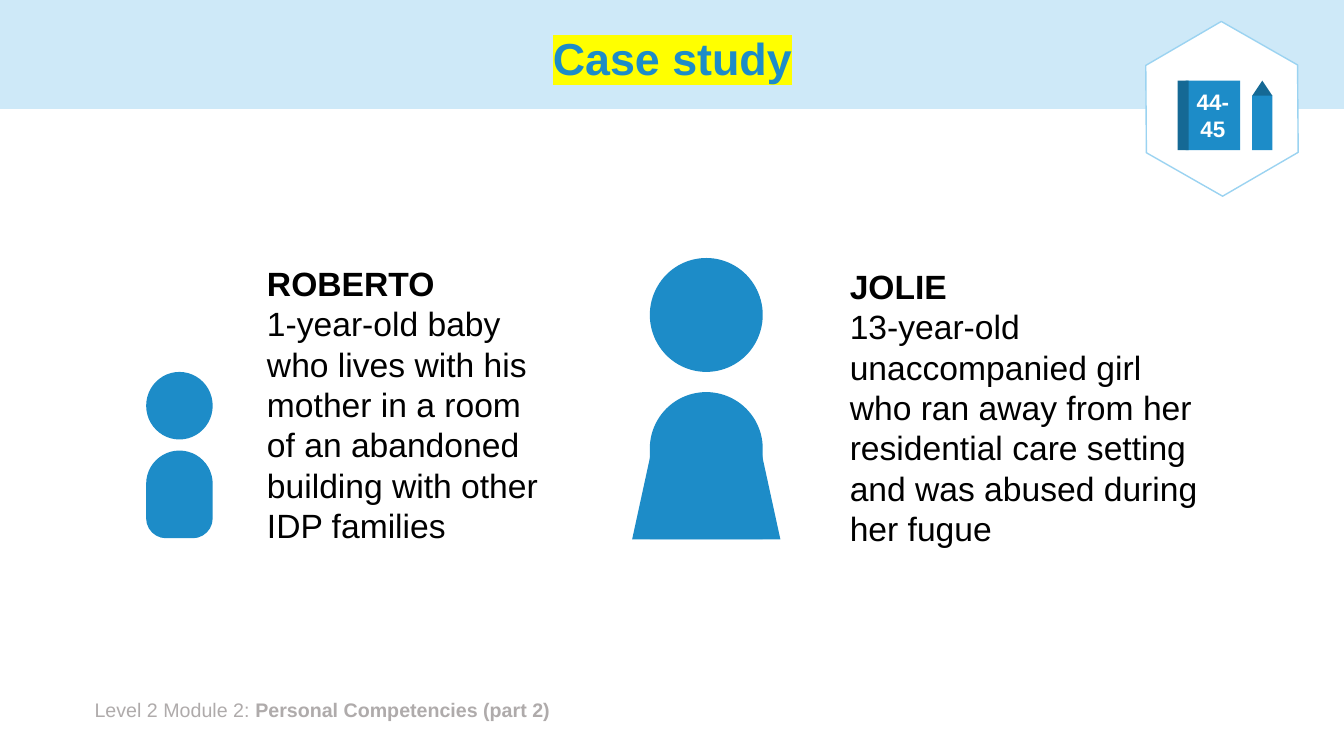
import pptx
import pptx.dml.color
import pptx.enum.shapes
import pptx.enum.text
import pptx.oxml
import pptx.oxml.ns
import pptx.util

Inches = pptx.util.Inches
Pt = pptx.util.Pt
SHAPE = pptx.enum.shapes.MSO_SHAPE
ALIGN = pptx.enum.text.PP_ALIGN
ANCHOR = pptx.enum.text.MSO_ANCHOR

COLOURS = {
    "band": "CEE9F8",
    "blue": "1D8CC8",
    "dark_blue": "156995",
    "outline": "9BD3F1",
    "footer": "AFABAB",
    "highlight": "FFFF00",
    "black": "000000",
    "white": "FFFFFF",
}


def rgb(colour):
    return pptx.dml.color.RGBColor.from_string(COLOURS[colour])


def highlight_run(run, colour):
    fill = run.font._element.find(pptx.oxml.ns.qn("a:solidFill"))
    fill.addnext(pptx.oxml.parse_xml(
        f'<a:highlight {pptx.oxml.ns.nsdecls("a")}>'
        f'<a:srgbClr val="{COLOURS[colour]}"/></a:highlight>'))


def write_text(frame, paragraphs, size, colour, align=ALIGN.LEFT,
               anchor=ANCHOR.TOP, wrap=True, spacing=None, highlight=None):
    """Fill a text frame; each paragraph is a list of (text, bold) runs."""
    frame.word_wrap = wrap
    frame.vertical_anchor = anchor
    for index, runs in enumerate(paragraphs):
        paragraph = frame.add_paragraph() if index else frame.paragraphs[0]
        paragraph.alignment = align
        if spacing:
            paragraph.line_spacing = spacing
        for text, bold in runs:
            run = paragraph.add_run()
            run.text = text
            run.font.name = "Arial"
            run.font.size = Pt(size)
            run.font.bold = bold
            run.font.color.rgb = rgb(colour)
            if highlight:
                highlight_run(run, highlight)


def add_figure(shapes, kind, left, top, width, height, fill, line=None, adjust=()):
    figure = shapes.add_shape(kind, Inches(left), Inches(top),
                              Inches(width), Inches(height))
    figure.shadow.inherit = False
    figure.fill.solid()
    figure.fill.fore_color.rgb = rgb(fill)
    if line:
        figure.line.color.rgb = rgb(line)
        figure.line.width = Pt(1)
    else:
        figure.line.fill.background()
    for index, value in enumerate(adjust):
        figure.adjustments[index] = value
    return figure


def add_text(slide, left, top, width, height, paragraphs, **text_format):
    box = slide.shapes.add_textbox(Inches(left), Inches(top),
                                   Inches(width), Inches(height))
    write_text(box.text_frame, paragraphs, **text_format)


def add_header(slide, width, height):
    band = add_figure(slide.shapes, SHAPE.RECTANGLE, 0, 0, width, height, "band")
    title = slide.shapes.title
    band._element.getparent().insert(2, band._element)  # behind the title
    title.left, title.top = Inches(0.92), Inches(0.13)
    title.width, title.height = Inches(11.5), Inches(height - 0.13)
    title.text_frame.auto_size = pptx.enum.text.MSO_AUTO_SIZE.NONE
    write_text(title.text_frame, [[("Case study", True)]], size=32, colour="blue",
               align=ALIGN.CENTER, anchor=ANCHOR.MIDDLE, spacing=0.9,
               highlight="highlight")


def add_footer(slide, left, top, width, height):
    add_text(slide, left, top, width, height,
             [[("Level 2 Module 2: ", False),
               ("Personal Competencies (part 2)", True)]],
             size=14, colour="footer")


def add_baby(slide, left, top, width, height):
    shapes = slide.shapes.add_group_shape().shapes
    body_height = 0.87
    add_figure(shapes, SHAPE.ROUND_2_SAME_RECTANGLE, left, top + height - body_height,
               width, body_height, "blue", adjust=(0.5, 0.3))
    add_figure(shapes, SHAPE.OVAL, left, top, width, width + 0.01, "blue")


def add_girl(slide, left, top, width, height):
    shapes = slide.shapes.add_group_shape().shapes
    head, body_height, skirt_height = 1.12, 1.46, 0.99
    inset = (width - head) / 2
    bottom = top + height
    add_figure(shapes, SHAPE.ROUND_2_SAME_RECTANGLE, left + inset,
               bottom - body_height, head, body_height, "blue", adjust=(0.5, 0))
    add_figure(shapes, SHAPE.OVAL, left + inset, top, head, head + 0.01, "blue")
    add_figure(shapes, SHAPE.TRAPEZOID, left, bottom - skirt_height,
               width, skirt_height, "blue", adjust=(0.218,))


def add_story(slide, left, top, width, height, name, story):
    add_text(slide, left, top, width, height,
             [[(name, True)], [(story, False)]], size=24, colour="black")


def add_page_badge(slide, left, top, width, height, pages):
    """Hexagon holding a book with page numbers and a pencil."""
    shapes = slide.shapes.add_group_shape().shapes
    hexagon = add_figure(shapes, SHAPE.HEXAGON, left, top, width, height, "white",
                         line="outline", adjust=(0.29, 1.1547))
    hexagon.rotation = 29.7
    book_top, book_height, tip_height = top + 0.47, 0.69, 0.15
    pencil_left, pencil_width = left + 1.17, 0.2
    cover = add_figure(shapes, SHAPE.RECTANGLE, left + 0.51, book_top,
                       0.54, book_height, "blue")
    write_text(cover.text_frame, [[(page, True)] for page in pages], size=16,
               colour="white", align=ALIGN.CENTER, anchor=ANCHOR.MIDDLE, wrap=False)
    add_figure(shapes, SHAPE.RECTANGLE, left + 0.43, book_top,
               0.11, book_height, "dark_blue")
    add_figure(shapes, SHAPE.ISOSCELES_TRIANGLE, pencil_left, book_top,
               pencil_width, tip_height, "dark_blue")
    add_figure(shapes, SHAPE.RECTANGLE, pencil_left, book_top + tip_height,
               pencil_width, book_height - tip_height, "blue")


def main():
    deck = pptx.Presentation()
    deck.slide_width, deck.slide_height = Inches(13.33), Inches(7.5)
    slide = deck.slides.add_slide(deck.slide_layouts[5])
    add_header(slide, 13.33, 1.08)
    add_footer(slide, 0.84, 6.87, 8.56, 0.34)
    add_baby(slide, 1.45, 3.69, 0.66, 1.65)
    add_story(slide, 2.55, 2.56, 2.9, 2.93, "ROBERTO",
              "1-year-old baby who lives with his mother in a room of an "
              "abandoned building with other IDP families")
    add_girl(slide, 6.27, 2.56, 1.47, 2.79)
    add_story(slide, 8.33, 2.59, 3.65, 2.93, "JOLIE",
              "13-year-old unaccompanied girl who ran away from her residential "
              "care setting and was abused during her fugue")
    add_page_badge(slide, 11.25, 0.33, 1.74, 1.5, ("44-", "45"))
    deck.save("out.pptx")


if __name__ == "__main__":
    main()
